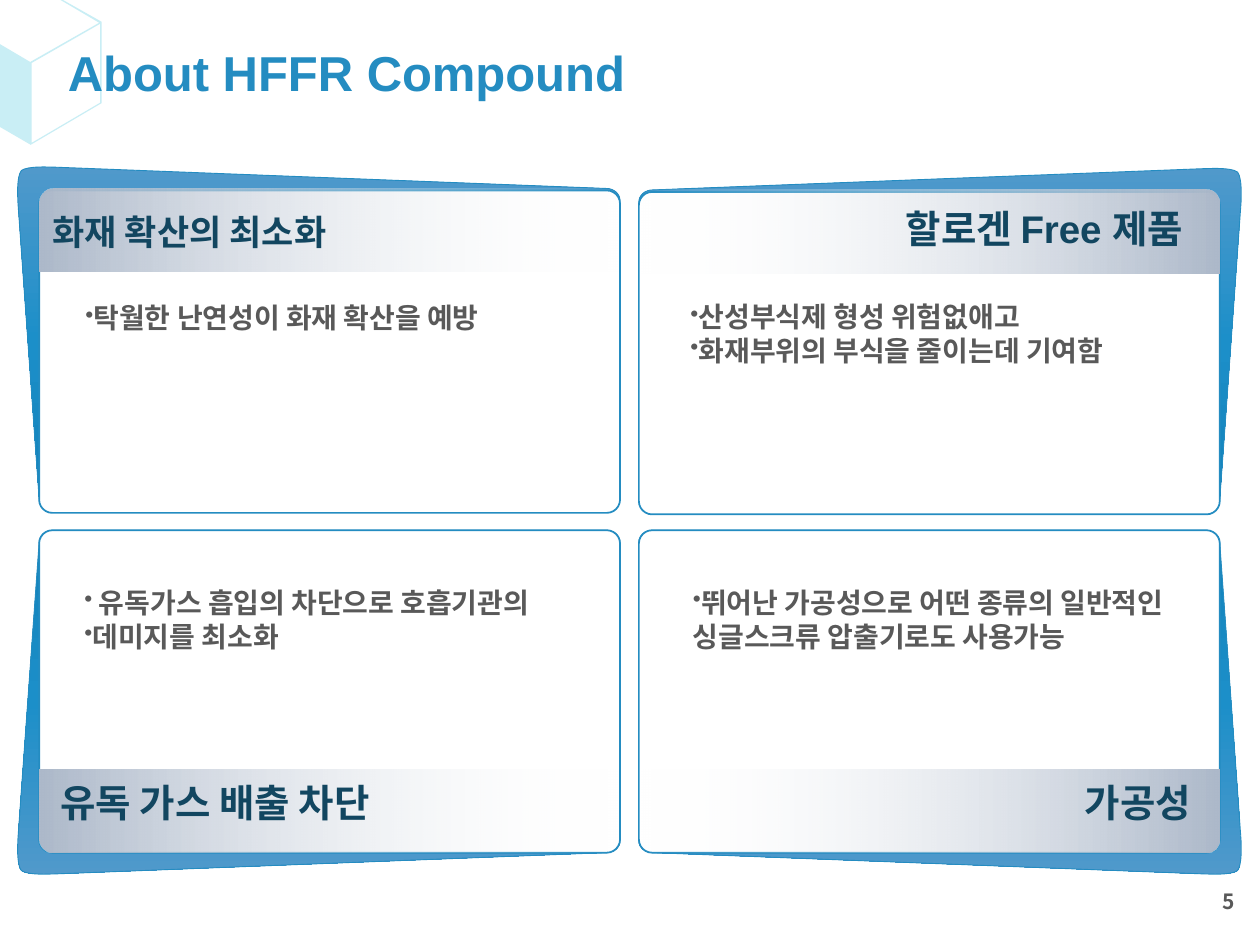
import pptx
import pptx.util
import pptx.dml.color
import pptx.enum.shapes
import pptx.enum.text
import pptx.oxml
import pptx.oxml.ns

Cm = pptx.util.Cm
Pt = pptx.util.Pt
RGBColor = pptx.dml.color.RGBColor
MSO_SHAPE = pptx.enum.shapes.MSO_SHAPE
ALIGN = pptx.enum.text.PP_ALIGN
ANCHOR = pptx.enum.text.MSO_ANCHOR

BLUE = RGBColor(0x24, 0x8C, 0xC1)
NAVY = RGBColor(0x12, 0x46, 0x60)
GREY = RGBColor(0x59, 0x59, 0x59)
WHITE = RGBColor(0xFF, 0xFF, 0xFF)
PALE_CYAN = RGBColor(0xC9, 0xEE, 0xF5)
FRAME_LIGHT = RGBColor(0x50, 0x99, 0xCB)
FRAME_MID = RGBColor(0x1C, 0x8F, 0xC9)
FRAME_DARK = RGBColor(0x12, 0x81, 0xB9)
BAND_GREY = RGBColor(0xAD, 0xB9, 0xCA)

# Content: boxes are (left, top, width, height) in cm
TITLE = "About HFFR Compound"
PAGE_NUMBER = "5"
QUADRANTS = [
    dict(right=False, bottom=False, top=3.8,
         heading="화재 확산의 최소화", heading_size=20, heading_box=(0.81, 4.11, 13.21, 1.12),
         points=["탁월한 난연성이 화재 확산을 예방"],
         points_box=(1.47, 5.94, 10.64, 0.94), wrap=True),
    dict(right=True, bottom=False, top=3.83,
         heading="할로겐 Free 제품", heading_size=22, heading_box=(17.55, 4.01, 6.55, 1.19),
         points=["산성부식제 형성 위험없애고", "화재부위의 부식을 줄이는데 기여함"],
         points_box=(13.67, 5.92, 9.83, 1.63), wrap=False),
    dict(right=False, bottom=True, top=10.69,
         heading="유독 가스 배출 차단", heading_size=22, heading_box=(0.97, 15.57, 7.62, 1.19),
         points=[" 유독가스 흡입의 차단으로 호흡기관의", "데미지를 최소화"],
         points_box=(1.45, 11.68, 10.59, 1.63), wrap=False),
    dict(right=True, bottom=True, top=10.69,
         heading="가공성", heading_size=22, heading_box=(21.39, 15.57, 2.87, 1.19),
         points=["뛰어난 가공성으로 어떤 종류의 일반적인 싱글스크류 압출기로도 사용가능"],
         points_box=(13.72, 11.68, 10.39, 1.63), wrap=True),
]

# Panel geometry in cm
PANEL_W, PANEL_H, BAND_H = 11.71, 6.5, 1.68
LEFT_X, RIGHT_X = 0.79, 12.88

# Flared frame of the top-left panel: one point is a line, three are a curve
FRAME_START = (-0.43, 0.25)
FRAME_SEGMENTS = [
    [(-0.43, 0.2), (-0.46, -0.23), (-0.36, -0.36)],
    [(-0.23, -0.46), (0.23, -0.43), (0.3, -0.43)],
    [(11.43, 0)],
    [(11.58, 0), (11.71, 0.1), (11.71, 0.25)],
    [(11.71, 6.25)],
    [(11.71, 6.4), (11.58, 6.5), (11.43, 6.5)],
    [(0.3, 6.5)],
    [(0.13, 6.5), (0, 6.4), (0, 6.25)],
]
CUBE_OUTLINE = [(0.62, 2.92), (2.05, 2.08), (2.05, 0.44), (1.27, 0), (1.22, 0),
                (2, 0.46), (0.61, 1.25), (0, 0.89), (0, 2.56)]
CUBE_FACE = [(0.64, 1.27), (2.02, 0.48), (2.02, 2.07), (0.64, 2.88)]


def frame_points(steps=8):
    points = [FRAME_START]
    for segment in FRAME_SEGMENTS:
        if len(segment) == 1:
            points += segment
            continue
        corners = [points[-1]] + segment
        for step in range(1, steps + 1):
            t = step / steps
            weights = ((1 - t) ** 3, 3 * t * (1 - t) ** 2, 3 * t * t * (1 - t), t ** 3)
            points.append(tuple(sum(w * c[axis] for w, c in zip(weights, corners))
                                for axis in (0, 1)))
    return points


def add_outline(slide, *contours):
    contours = [[(Cm(x), Cm(y)) for x, y in contour] for contour in contours]
    builder = slide.shapes.build_freeform(*contours[0][0], scale=1.0)
    builder.add_line_segments(contours[0][1:], close=True)
    for contour in contours[1:]:
        builder.move_to(*contour[0])
        builder.add_line_segments(contour[1:], close=True)
    outline = builder.convert_to_shape()
    outline.shadow.inherit = False
    return outline


def add_preset(slide, preset, box):
    preset_shape = slide.shapes.add_shape(preset, *map(Cm, box))
    preset_shape.shadow.inherit = False
    return preset_shape


def set_gradient(shape, stops, angle):
    """Stops are (percent, colour, opacity percent)."""
    shape.fill.background()
    old_fill = shape._element.spPr.find(pptx.oxml.ns.qn("a:noFill"))
    stop_xml = "".join(
        f'<a:gs pos="{pos * 1000}"><a:srgbClr val="{colour}">'
        f'<a:alpha val="{opacity * 1000}"/></a:srgbClr></a:gs>'
        for pos, colour, opacity in stops)
    gradient = pptx.oxml.parse_xml(
        f'<a:gradFill {pptx.oxml.ns.nsdecls("a")} rotWithShape="1"><a:gsLst>{stop_xml}</a:gsLst>'
        f'<a:lin ang="{angle * 60000}" scaled="0"/></a:gradFill>')
    old_fill.getparent().replace(old_fill, gradient)


def set_line(shape, width):
    shape.line.color.rgb = BLUE
    shape.line.width = Pt(width)


def add_text(slide, box, lines, size, colour, align=ALIGN.LEFT, wrap=True,
             bullets=False, anchor=ANCHOR.TOP, font="Arial", spacing=None):
    frame = slide.shapes.add_textbox(*map(Cm, box)).text_frame
    frame.word_wrap = wrap
    frame.vertical_anchor = anchor
    frame.text = "\n".join(lines)
    for paragraph in frame.paragraphs:
        paragraph.alignment = align
        if spacing:
            paragraph.line_spacing = spacing
        if bullets:
            properties = paragraph._p.get_or_add_pPr()
            for tag in ('buSzPct {} val="85000"', 'buChar {} char="•"'):
                properties.append(pptx.oxml.parse_xml(
                    f'<a:{tag.format(pptx.oxml.ns.nsdecls("a"))}/>'))
        for run in paragraph.runs:
            run.font.name = font
            run.font.size = Pt(size)
            run.font.bold = True
            run.font.color.rgb = colour


def add_panel(slide, quadrant):
    right, bottom, top = quadrant["right"], quadrant["bottom"], quadrant["top"]
    left = RIGHT_X if right else LEFT_X

    # Flared frame, mirrored towards the outer corner
    flared = add_outline(slide, [
        (left + (PANEL_W - x if right else x), top + (PANEL_H - y if bottom else y))
        for x, y in frame_points()])
    colours = [FRAME_LIGHT, FRAME_MID, FRAME_DARK]
    if bottom:
        colours.reverse()
    set_gradient(flared, [(pos, c, 100) for pos, c in zip((0, 50, 100), colours)], 90)
    set_line(flared, 0.5)

    # White card
    card_top = top if bottom else top + 0.04
    card = add_preset(slide, MSO_SHAPE.ROUNDED_RECTANGLE, (left, card_top, PANEL_W, PANEL_H))
    card.adjustments[0] = 0.041
    card.fill.solid()
    card.fill.fore_color.rgb = WHITE
    set_line(card, 1)

    # Heading band fading towards the centre of the slide
    band_top = top + PANEL_H - BAND_H if bottom else top
    band = add_preset(slide, MSO_SHAPE.ROUND_2_SAME_RECTANGLE, (left, band_top, PANEL_W, BAND_H))
    set_gradient(band, [(0, BAND_GREY, 100), (100, WHITE, 0)], 0)
    band.line.fill.background()
    for flip, flipped in (("flipH", right), ("flipV", bottom)):
        if flipped:
            band._element.spPr.xfrm.set(flip, "1")


def main():
    presentation = pptx.Presentation()
    presentation.slide_width, presentation.slide_height = Cm(25.4), Cm(19.05)
    slide = presentation.slides.add_slide(presentation.slide_layouts[6])

    # Corner cube
    cube = add_outline(slide, CUBE_OUTLINE, CUBE_FACE)
    cube.fill.solid()
    cube.fill.fore_color.rgb = PALE_CYAN
    cube.line.fill.background()

    for quadrant in QUADRANTS:
        add_panel(slide, quadrant)

    # Headings and points
    for quadrant in QUADRANTS:
        add_text(slide, quadrant["heading_box"], [quadrant["heading"]],
                 quadrant["heading_size"], NAVY,
                 align=ALIGN.RIGHT if quadrant["right"] else ALIGN.LEFT,
                 wrap=quadrant["heading_size"] == 20)
        add_text(slide, quadrant["points_box"], quadrant["points"], 16, GREY,
                 wrap=quadrant["wrap"], bullets=True)

    # Title and page number
    add_text(slide, (1.12, 0.58, 22.3, 1.88), [TITLE], 28, BLUE,
             anchor=ANCHOR.MIDDLE, spacing=0.9)
    add_text(slide, (20.09, 17.65, 5.05, 1.02), [PAGE_NUMBER], 12, GREY,
             align=ALIGN.RIGHT, anchor=ANCHOR.MIDDLE, font="Noto Sans CJK KR")

    presentation.save("out.pptx")


if __name__ == "__main__":
    main()
